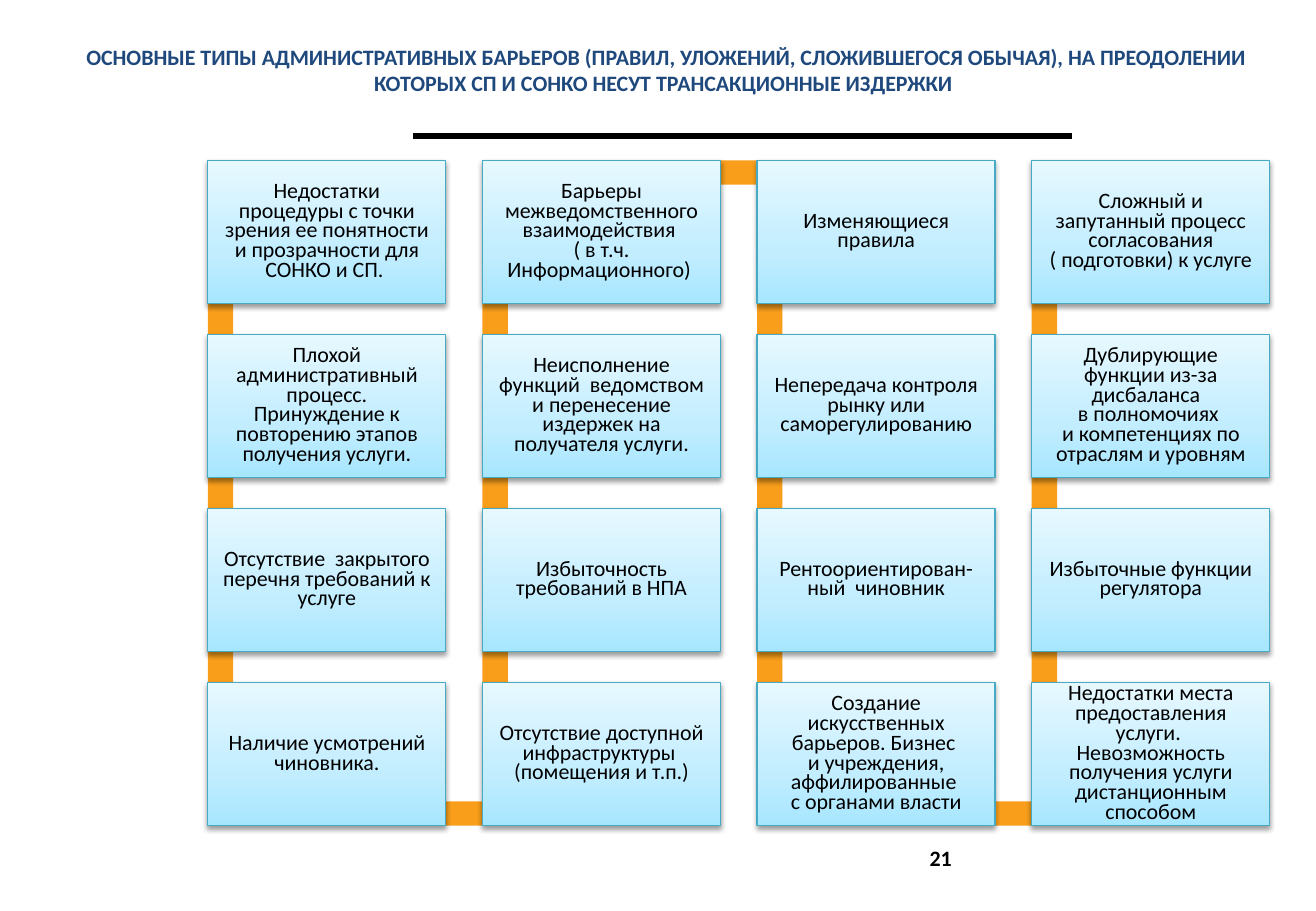
from lxml.etree import SubElement
from pptx import Presentation
from pptx.dml.color import RGBColor
from pptx.enum.shapes import MSO_CONNECTOR, MSO_SHAPE
from pptx.enum.text import MSO_ANCHOR, PP_ALIGN
from pptx.oxml.ns import qn
from pptx.util import Inches, Pt

THEME = {
    "font": "Calibri",
    "size": Pt(13),
    "text": RGBColor.from_string("000000"),
    "title": RGBColor.from_string("1F497D"),
    "link": RGBColor.from_string("F89E1B"),
    "border": RGBColor.from_string("46AAC5"),
    "gradient": [(0, "A7E6FF"), (35, "C1EDFF"), (100, "E7F8FF")],
    "shadow": "000000",
}
LEFT, TOP = 1.71, 1.32
COLUMN_STEP, ROW_STEP = 2.26, 1.433
CARD_WIDTH, CARD_HEIGHT = 1.96, 1.18
LINK_WIDTH, BRIDGE_WIDTH, BRIDGE_HEIGHT = 0.21, 0.86, 0.2

COLUMNS = [
    [
        "Недостатки процедуры с точки зрения ее понятности и прозрачности для CОНКО и СП. ",
        "Плохой административный процесс. Принуждение к повторению этапов получения услуги.",
        "Отсутствие  закрытого перечня требований к услуге",
        "Наличие усмотрений чиновника.",
    ],
    [
        "Барьеры межведомственного взаимодействия \n( в т.ч. Информационного) ",
        "Неисполнение функций  ведомством и перенесение издержек на получателя услуги.",
        "Избыточность требований в НПА",
        "Отсутствие доступной инфраструктуры  (помещения и т.п.)",
    ],
    [
        "Изменяющиеся правила",
        "Непередача контроля рынку или саморегулированию",
        "Рентоориентирован-ный  чиновник",
        "Создание искусственных барьеров. Бизнес \nи учреждения, аффилированные \nс органами власти",
    ],
    [
        "Сложный и запутанный процесс согласования ( подготовки) к услуге",
        "Дублирующие функции из-за дисбаланса  \nв полномочиях \nи компетенциях по отраслям и уровням",
        "Избыточные функции регулятора",
        " Недостатки места  предоставления услуги.  Невозможность получения услуги дистанционным способом",
    ],
]


def add_rectangle(left, top, width, height):
    shape = page.shapes.add_shape(
        MSO_SHAPE.RECTANGLE, Inches(left), Inches(top), Inches(width), Inches(height)
    )
    shape.shadow.inherit = False
    return shape


def write(box, text, color, align, bold=False):
    box.text_frame.word_wrap = True
    para = box.text_frame.paragraphs[0]
    para.text = text
    para.alignment = align
    para.font.name = THEME["font"]
    para.font.size = THEME["size"]
    para.font.bold = bold
    para.font.color.rgb = color
    return para


deck = Presentation()
deck.slide_width, deck.slide_height = Inches(10.83), Inches(7.5)
page = deck.slides.add_slide(deck.slide_layouts[6])

lefts = [LEFT + column * COLUMN_STEP for column in range(4)]
tops = [TOP + row * ROW_STEP for row in range(4)]
bottom_bridge = tops[-1] + CARD_HEIGHT - BRIDGE_HEIGHT
links = [
    (left - BRIDGE_WIDTH + LINK_WIDTH, top, BRIDGE_WIDTH, BRIDGE_HEIGHT)
    for left, top in zip(lefts[1:], [bottom_bridge, TOP, bottom_bridge])
]
links += [(left, 2.26, LINK_WIDTH, 3.54) for left in lefts]
for link in links:
    bar = add_rectangle(*link)
    bar.fill.solid()
    bar.fill.fore_color.rgb = THEME["link"]
    bar.line.fill.background()

number = page.shapes.add_textbox(Inches(7.65), Inches(6.95), Inches(2.44), Inches(0.4))
frame = number.text_frame
frame.margin_left = frame.margin_right = frame.margin_top = frame.margin_bottom = 0
write(number, "21", THEME["text"], PP_ALIGN.LEFT, True)

title = page.shapes.add_textbox(Inches(0.5), Inches(0.31), Inches(9.95), Inches(0.54))
write(
    title,
    "ОСНОВНЫЕ ТИПЫ АДМИНИСТРАТИВНЫХ БАРЬЕРОВ (ПРАВИЛ, УЛОЖЕНИЙ, СЛОЖИВШЕГОСЯ ОБЫЧАЯ), "
    "НА ПРЕОДОЛЕНИИ КОТОРЫХ СП И СОНКО НЕСУТ ТРАНСАКЦИОННЫЕ ИЗДЕРЖКИ ",
    THEME["title"],
    PP_ALIGN.CENTER,
    True,
)

rule = page.shapes.add_connector(
    MSO_CONNECTOR.STRAIGHT, Inches(3.4), Inches(1.12), Inches(8.82), Inches(1.12)
)
rule.line.color.rgb = THEME["text"]
rule.line.width = Pt(3)
SubElement(rule._element.spPr, qn("a:effectLst"))

for left, labels in zip(lefts, COLUMNS):
    for top, label in zip(tops, labels):
        card = add_rectangle(left, top, CARD_WIDTH, CARD_HEIGHT)
        card.fill.gradient()
        card.fill.gradient_angle = 90
        properties = card._element.spPr
        stops = properties.find(".//" + qn("a:gsLst"))
        for stop in list(stops):
            stops.remove(stop)
        for position, color in THEME["gradient"]:
            stop = SubElement(stops, qn("a:gs"), pos=str(position * 1000))
            SubElement(stop, qn("a:srgbClr"), val=color)
        card.line.color.rgb = THEME["border"]
        card.line.width = Pt(0.75)
        shadow = SubElement(
            properties.find(qn("a:effectLst")),
            qn("a:outerShdw"),
            blurRad=str(Pt(3.1)),
            dist=str(Pt(1.6)),
            dir="5400000",
            rotWithShape="0",
        )
        shade = SubElement(shadow, qn("a:srgbClr"), val=THEME["shadow"])
        SubElement(shade, qn("a:alpha"), val="38000")
        card.text_frame.vertical_anchor = MSO_ANCHOR.MIDDLE
        para = write(card, label, THEME["text"], PP_ALIGN.CENTER)
        para.line_spacing = 0.75

deck.save("out.pptx")
